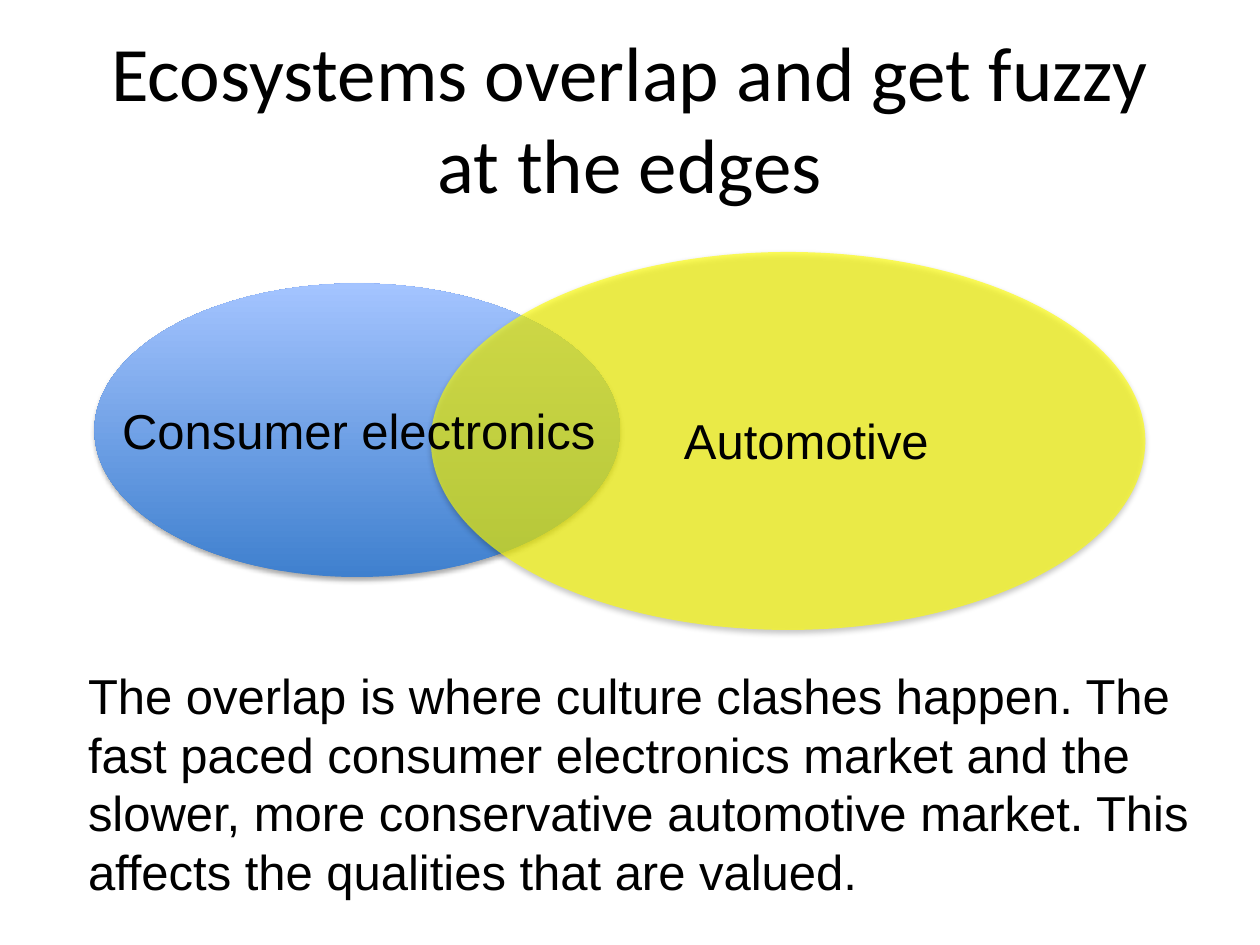
from lxml import etree
from pptx import Presentation
from pptx.dml.color import RGBColor
from pptx.enum.shapes import MSO_SHAPE
from pptx.enum.text import MSO_ANCHOR, MSO_AUTO_SIZE, PP_ALIGN
from pptx.oxml.ns import qn
from pptx.util import Inches, Pt

OVAL = MSO_SHAPE.OVAL
MIDDLE = MSO_ANCHOR.MIDDLE
FIT_SHAPE, NO_FIT = MSO_AUTO_SIZE.SHAPE_TO_FIT_TEXT, MSO_AUTO_SIZE.NONE
LEFT, CENTER = PP_ALIGN.LEFT, PP_ALIGN.CENTER
TITLE_ONLY = 5

COLORS = {
    "text": "000000",
    "shadow": "000000",
    "blue_dark": "3F80CE",
    "blue_light": "A4C4FF",
    "yellow": "FFFF00",
}


def rgb(name):
    return RGBColor.from_string(COLORS[name])


class SlideBuilder:
    title_font, title_size = "Calibri", 44
    body_font, body_size = "Arial", 28

    def __init__(self, prs):
        self.slide = prs.slides.add_slide(prs.slide_layouts[TITLE_ONLY])

    def format_text(self, tf, font, size, align):
        for p in tf.paragraphs:
            p.alignment = align
            for r in p.runs:
                r.font.name = font
                r.font.size = Pt(size)
                r.font.color.rgb = rgb("text")

    def title(self, text, left, top, width, height):
        sp = self.slide.shapes.title
        sp.left, sp.top = Inches(left), Inches(top)
        sp.width, sp.height = Inches(width), Inches(height)
        tf = sp.text_frame
        tf.text = text
        tf.word_wrap = True
        tf.auto_size = NO_FIT
        tf.vertical_anchor = MIDDLE
        self.format_text(tf, self.title_font, self.title_size, CENTER)

    def text(self, lines, left, top, width, height):
        sp = self.slide.shapes.add_textbox(
            Inches(left), Inches(top), Inches(width), Inches(height))
        tf = sp.text_frame
        tf.text = "\n".join(lines)
        tf.word_wrap = False
        tf.auto_size = FIT_SHAPE
        self.format_text(tf, self.body_font, self.body_size, LEFT)

    def ellipse(self, left, top, width, height):
        sp = self.slide.shapes.add_shape(
            OVAL, Inches(left), Inches(top), Inches(width), Inches(height))
        sp.line.fill.background()
        self.add_shadow(sp)
        return sp

    def gradient_ellipse(self, bottom, top_color, *box):
        fill = self.ellipse(*box).fill
        fill.gradient()
        fill.gradient_angle = 90
        for stop, color in zip(fill.gradient_stops, (bottom, top_color)):
            stop.color.rgb = rgb(color)

    def translucent_ellipse(self, color, opacity, *box):
        sp = self.ellipse(*box)
        sp.fill.solid()
        sp.fill.fore_color.rgb = rgb(color)
        clr = sp.element.spPr.find(qn("a:solidFill"))[0]
        etree.SubElement(clr, qn("a:alpha"), val=str(opacity * 1000))

    def add_shadow(self, sp):
        sp.shadow.inherit = False
        effects = sp.element.spPr.find(qn("a:effectLst"))
        shadow = etree.SubElement(
            effects, qn("a:outerShdw"), blurRad=str(Pt(3.1)),
            dist=str(Pt(1.8)), dir="5400000", rotWithShape="0")
        clr = etree.SubElement(shadow, qn("a:srgbClr"), val=COLORS["shadow"])
        etree.SubElement(clr, qn("a:alpha"), val="35000")


def main():
    prs = Presentation()
    prs.slide_width, prs.slide_height = Inches(10), Inches(7.5)
    s = SlideBuilder(prs)

    s.title("Ecosystems overlap and get fuzzy at the edges", 0.5, 0.3, 9, 1.25)

    # Overlapping ecosystems
    s.gradient_ellipse("blue_dark", "blue_light", 0.75, 2.25, 4.17, 2.33)
    s.translucent_ellipse("yellow", 64, 3.42, 2, 5.67, 3)

    # Ecosystem labels
    s.text(["Automotive"], 5.33, 3.21, 2.17, 0.57)
    s.text(["Consumer electronics"], 0.87, 3.13, 4.01, 0.57)

    # Explanation
    s.text([
        "The overlap is where culture clashes happen. The",
        "fast paced consumer electronics market and the",
        "slower, more conservative automotive market. This",
        "affects the qualities that are valued.",
    ], 0.6, 5.23, 9.05, 1.99)

    prs.save("out.pptx")


if __name__ == "__main__":
    main()
